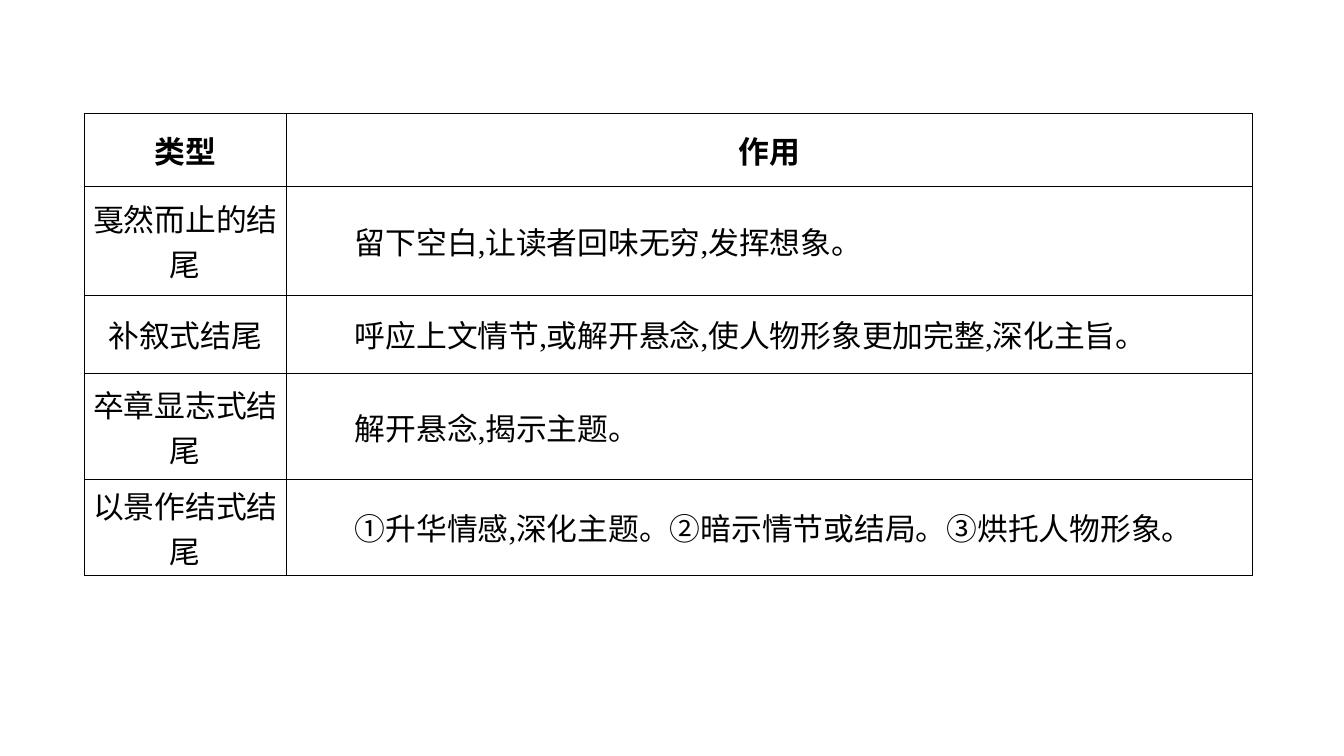
from pptx import Presentation
from pptx.dml.color import RGBColor
from pptx.enum.text import MSO_ANCHOR, PP_ALIGN
from pptx.oxml import parse_xml
from pptx.oxml.ns import nsdecls
from pptx.util import Cm, Pt

HEADINGS = ("类型", "作用")
ENDINGS = [
    ("戛然而止的结尾", "留下空白,让读者回味无穷,发挥想象。"),
    ("补叙式结尾", "呼应上文情节,或解开悬念,使人物形象更加完整,深化主旨。"),
    ("卒章显志式结尾", "解开悬念,揭示主题。"),
    ("以景作结式结尾", "①升华情感,深化主题。②暗示情节或结局。③烘托人物形象。"),
]
COLUMN_WIDTHS = (5.08, 24.36)
ROW_HEIGHTS = (1.83, 2.74, 1.98, 2.67, 2.41)
SIDE_MARGINS = (0, 0.18)
LEFT, TOP = 2.13, 2.87
FONT, TEXT_SIZE = "Times New Roman", 22
BLACK, WHITE = "000000", "FFFFFF"


def color(hex_code):
    return RGBColor.from_string(hex_code)


def add_borders(cell):
    for side in ("lnL", "lnR", "lnT", "lnB"):
        cell._tc.get_or_add_tcPr().append(parse_xml(
            f'<a:{side} {nsdecls("a")} w="{Pt(1)}"><a:solidFill>'
            f'<a:srgbClr val="{BLACK}"/></a:solidFill></a:{side}>'))


def fill_cell(cell, text, side_margin, is_heading, is_effect):
    cell.vertical_anchor = MSO_ANCHOR.MIDDLE
    cell.margin_left = cell.margin_right = Cm(side_margin)
    cell.margin_top = cell.margin_bottom = 0
    add_borders(cell)
    cell.fill.solid()
    cell.fill.fore_color.rgb = color(WHITE)

    cell.text = text
    paragraph = cell.text_frame.paragraphs[0]
    if is_effect and not is_heading:
        paragraph.alignment = PP_ALIGN.LEFT
        # First line is indented by two characters
        paragraph._p.get_or_add_pPr().set("indent", str(Pt(2 * TEXT_SIZE)))
    else:
        paragraph.alignment = PP_ALIGN.CENTER
    font = paragraph.font
    font.name, font.size, font.bold = FONT, Pt(TEXT_SIZE), is_heading
    font.color.rgb = color(BLACK)


def main():
    deck = Presentation()
    deck.slide_width, deck.slide_height = Cm(33.87), Cm(19.05)
    slide = deck.slides.add_slide(deck.slide_layouts[6])

    rows = [HEADINGS, *ENDINGS]
    endings_table = slide.shapes.add_table(
        len(rows), len(HEADINGS), Cm(LEFT), Cm(TOP),
        Cm(sum(COLUMN_WIDTHS)), Cm(sum(ROW_HEIGHTS))).table
    endings_table.first_row = endings_table.horz_banding = False
    for column, width in zip(endings_table.columns, COLUMN_WIDTHS):
        column.width = Cm(width)
    for row, height in zip(endings_table.rows, ROW_HEIGHTS):
        row.height = Cm(height)

    for r, texts in enumerate(rows):
        for c, text in enumerate(texts):
            fill_cell(endings_table.cell(r, c), text, SIDE_MARGINS[c],
                      is_heading=r == 0, is_effect=c == 1)
    deck.save("out.pptx")


if __name__ == "__main__":
    main()
